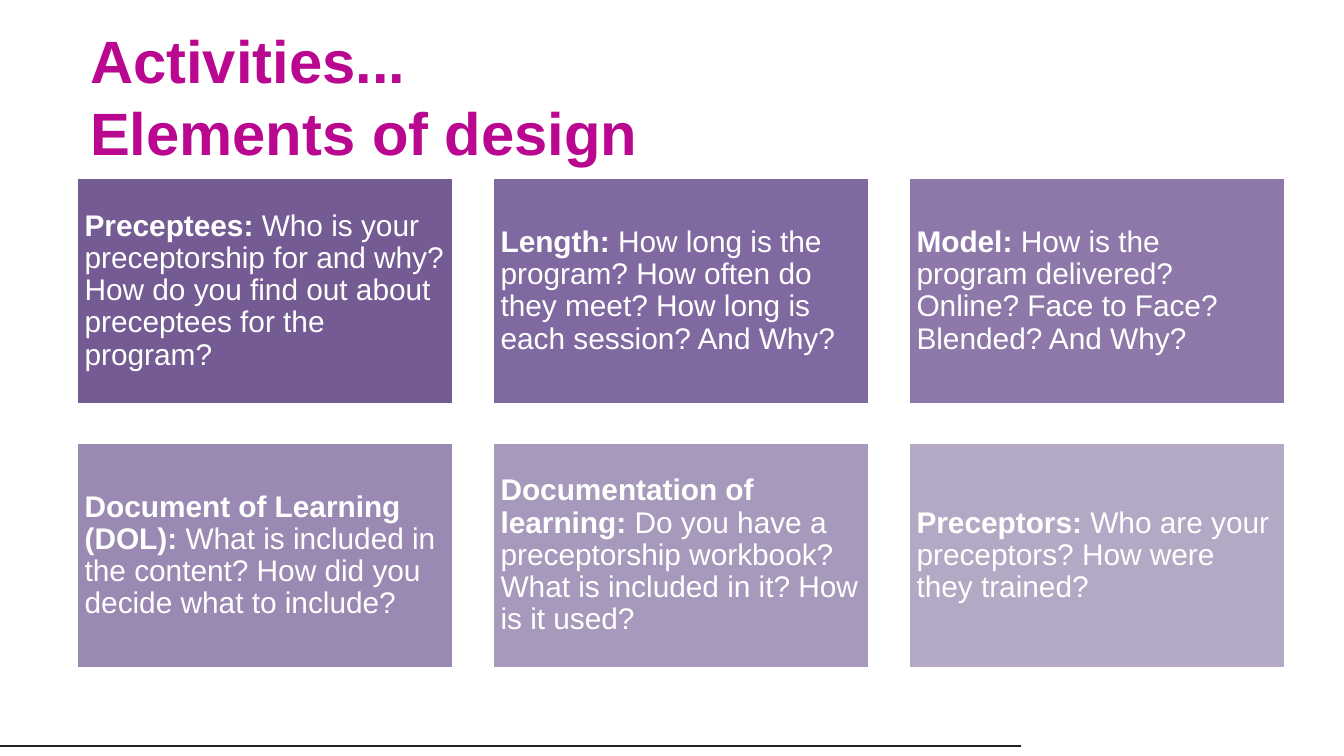
from lxml import etree
from pptx import Presentation
from pptx.dml.color import RGBColor
from pptx.enum.shapes import MSO_CONNECTOR, MSO_SHAPE
from pptx.enum.text import MSO_ANCHOR, PP_ALIGN
from pptx.oxml.ns import qn
from pptx.util import Inches, Pt

TITLE_LINES = ["Activities...", "Elements of design"]
CARDS = [
    ("Preceptees:", "Who is your preceptorship for and why? How do you find out about preceptees for the program?", RGBColor(0x74, 0x5B, 0x93)),
    ("Length:", "How long is the program? How often do they meet? How long is each session? And Why?", RGBColor(0x80, 0x68, 0xA0)),
    ("Model:", "How is the program delivered? Online? Face to Face? Blended? And Why?", RGBColor(0x8D, 0x78, 0xA9)),
    ("Document of Learning (DOL):", "What is included in the content? How did you decide what to include?", RGBColor(0x9A, 0x89, 0xB2)),
    ("Documentation of learning:", "Do you have a preceptorship workbook? What is included in it? How is it used?", RGBColor(0xA7, 0x99, 0xBB)),
    ("Preceptors:", "Who are your preceptors? How were they trained?", RGBColor(0xB4, 0xA9, 0xC5)),
]
WHITE = RGBColor(0xFF, 0xFF, 0xFF)
MAGENTA = RGBColor(0xBA, 0x07, 0x90)
DARK = RGBColor(0x21, 0x21, 0x21)
FONT = "Arial"
MIDDLE = MSO_ANCHOR.MIDDLE
LEFT = PP_ALIGN.LEFT
RECTANGLE = MSO_SHAPE.RECTANGLE
STRAIGHT = MSO_CONNECTOR.STRAIGHT

SLIDE_WIDTH = 10
SLIDE_HEIGHT = SLIDE_WIDTH * 9 / 16
MARGIN, CONTENT_WIDTH = 0.57, 9
COLUMNS = 3
CARD_WIDTH, CARD_HEIGHT = 2.81, 1.69
GRID_TOP, ROW_GAP = 1.32, 0.28
COLUMN_STEP = (CONTENT_WIDTH - CARD_WIDTH) / (COLUMNS - 1)
ROW_STEP = CARD_HEIGHT + ROW_GAP
INSET = 0.06
RULE_TOP, RULE_WIDTH = 5.55, 7.6


def add_span(para, text, size, color, bold):
    span = para.add_run()
    span.text = text
    span.font.name = FONT
    span.font.size = Pt(size)
    span.font.bold = bold
    span.font.color.rgb = color


def add_rule(page):
    rule = page.shapes.add_connector(
        STRAIGHT, Inches(RULE_WIDTH), Inches(RULE_TOP), 0, Inches(RULE_TOP))
    rule.line.color.rgb = DARK
    rule.line.width = Pt(0.75)
    etree.SubElement(rule.element.spPr, qn("a:effectLst"))


def fill_title(page):
    title = page.shapes.title
    title.left, title.top = Inches(MARGIN), Inches(0.24)
    title.width, title.height = Inches(CONTENT_WIDTH), Inches(0.94)
    frame = title.text_frame
    frame.vertical_anchor = MIDDLE
    frame.word_wrap = True
    para = frame.paragraphs[0]
    para.alignment = LEFT
    para.line_spacing = 1.0
    for index, line in enumerate(TITLE_LINES):
        if index:
            para.add_line_break()
        add_span(para, line, 32, MAGENTA, True)


def add_card(page, index, label, question, color):
    row, column = divmod(index, COLUMNS)
    box = page.shapes.add_shape(
        RECTANGLE,
        Inches(MARGIN + column * COLUMN_STEP), Inches(GRID_TOP + row * ROW_STEP),
        Inches(CARD_WIDTH), Inches(CARD_HEIGHT))
    box.shadow.inherit = False
    box.fill.solid()
    box.fill.fore_color.rgb = color
    box.line.color.rgb = WHITE
    box.line.width = Pt(2)
    frame = box.text_frame
    frame.word_wrap = True
    frame.vertical_anchor = MIDDLE
    frame.margin_left = frame.margin_right = Inches(INSET)
    frame.margin_top = frame.margin_bottom = Inches(INSET)
    para = frame.paragraphs[0]
    para.alignment = LEFT
    para.line_spacing = 0.9
    add_span(para, label, 16, WHITE, True)
    add_span(para, " " + question, 16, WHITE, False)


def main():
    deck = Presentation()
    deck.slide_width, deck.slide_height = Inches(SLIDE_WIDTH), Inches(SLIDE_HEIGHT)
    page = deck.slides.add_slide(deck.slide_layouts.get_by_name("Title Only"))
    add_rule(page)
    fill_title(page)
    for index, card in enumerate(CARDS):
        add_card(page, index, *card)
    deck.save("out.pptx")


if __name__ == "__main__":
    main()
